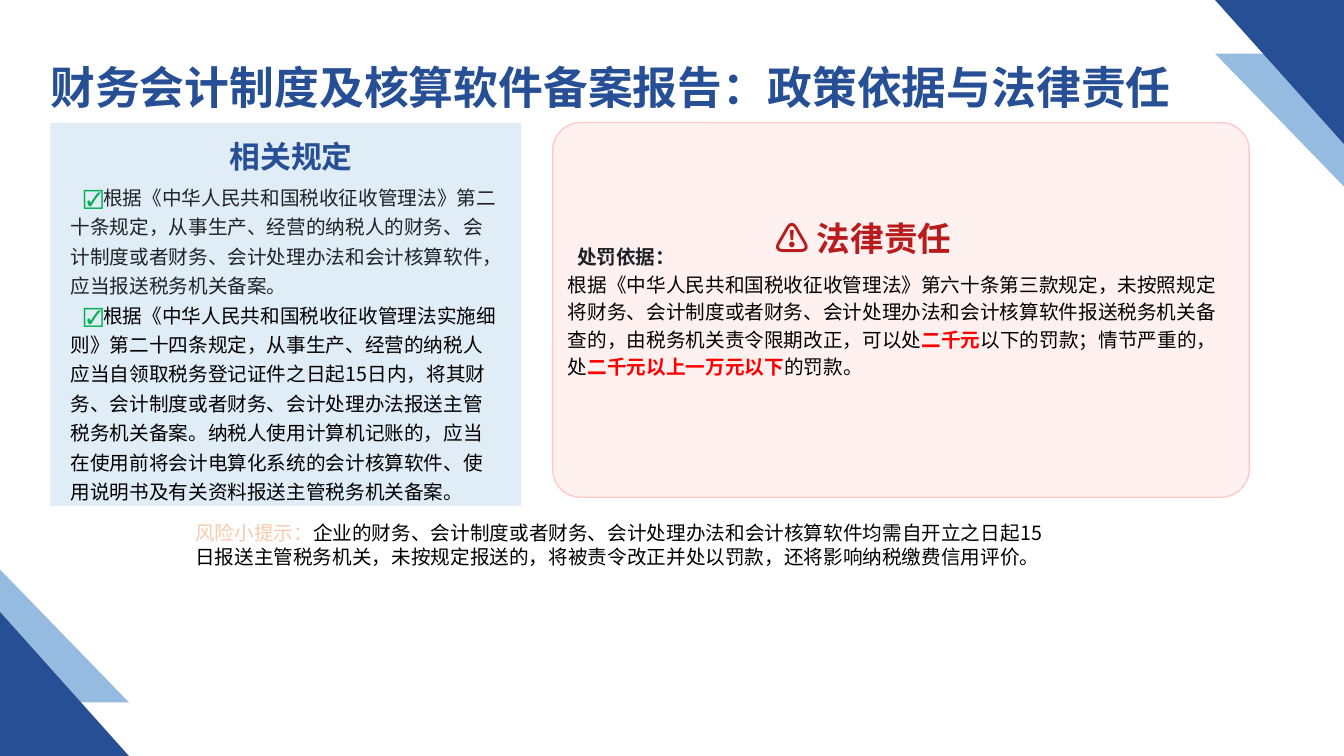
from dataclasses import dataclass

from lxml import etree
from pptx import Presentation
from pptx.dml.color import RGBColor
from pptx.enum.shapes import MSO_SHAPE
from pptx.enum.text import MSO_ANCHOR, MSO_AUTO_SIZE, PP_ALIGN
from pptx.oxml.ns import qn
from pptx.util import Cm, Pt

TRIANGLE, ROUNDED = MSO_SHAPE.RIGHT_TRIANGLE, MSO_SHAPE.ROUNDED_RECTANGLE
TOP, MIDDLE = MSO_ANCHOR.TOP, MSO_ANCHOR.MIDDLE
LEFT, CENTER = PP_ALIGN.LEFT, PP_ALIGN.CENTER
NO_FIT, GROW = MSO_AUTO_SIZE.NONE, MSO_AUTO_SIZE.SHAPE_TO_FIT_TEXT


@dataclass(frozen=True)
class Theme:
    font: str = "Noto Sans CJK SC"
    latin: str = "Arial"
    navy: str = "274F95"
    sky: str = "96BBE0"
    ice: str = "E0ECF6"
    blush: str = "FFF1F0"
    pink: str = "FECACA"
    crimson: str = "B91C1C"
    red: str = "FF0000"
    green: str = "00B050"
    ink: str = "1F2329"
    black: str = "000000"
    peach: str = "F8CBAD"
    orange: str = "ED7D31"
    title: int = 32
    warning: int = 24
    heading: int = 22
    body: int = 14


T = Theme()
SLIDE_W, SLIDE_H = 33.87, 19.05
CORNER_W = 3.25
CORNERS = [(14.35, 3.35, T.sky), (15.42, 3.63, T.navy)]

TITLE = [("财务会计制度及核算软件备案报告：政策依据与法律责任", T.navy, True)]
RULES_HEADING = [("相关规定", T.navy, True)]
RULES = [
    (0.33, [
        ("☑", T.green, False),
        ("根据《中华人民共和国税收征收管理法》第二十条规定，从事生产、经营的纳税人的财务、会计制度或者财务、"
         "会计处理办法和会计核算软件，应当报送税务机关备案。", T.ink, False),
    ]),
    (0.33, [
        ("☑", T.green, False),
        ("根据《中华人民共和国税收征收管理法实施细则》第二十四条规定，从事生产、经营的纳税人应当自领取税务登记证件之日起15日内，"
         "将其财务、会计制度或者财务、会计处理办法报送主管税务机关备案。纳税人使用计算机记账的，"
         "应当在使用前将会计电算化系统的会计核算软件、使用说明书及有关资料报送主管税务机关备案。", T.black, False),
    ]),
]
PENALTY = [
    (0.23, [("处罚依据：", T.ink, True)]),
    (0, [
        ("根据《中华人民共和国税收征收管理法》第六十条第三款规定，未按照规定将财务、会计制度或者财务、"
         "会计处理办法和会计核算软件报送税务机关备查的，由税务机关责令限期改正，可以处", T.black, False),
        ("二千元", T.red, True),
        ("以下的罚款；情节严重的，处", T.black, False),
        ("二千元以上一万元以下", T.red, True),
        ("的罚款。", T.black, False),
    ]),
]
WARNING = [("⚠ 法律责任", T.crimson, True)]
TIP = [
    ("风险小提示", T.peach, False, T.font, T.orange),
    ("：", T.peach, False, T.latin, T.orange),
    ("企业的财务、会计制度或者财务、会计处理办法和会计核算软件均需自开立之日起15日报送主管税务机关，"
     "未按规定报送的，将被责令改正并处以罚款，还将影响纳税缴费信用评价。", T.black, False),
]


def rgb(value):
    return RGBColor.from_string(value)


def add_run(p, size, text, color, bold, font=T.font, outline=None):
    r = p.add_run()
    r.text = text
    r.font.size, r.font.bold, r.font.name = Pt(size), bold, font
    r.font.color.rgb = rgb(color)
    props = r.font._element
    etree.SubElement(props, qn("a:ea")).set("typeface", T.font)
    if outline:
        ln = etree.Element(qn("a:ln"), w=str(Pt(1.75)))
        fill = etree.SubElement(ln, qn("a:solidFill"))
        etree.SubElement(fill, qn("a:srgbClr")).set("val", outline)
        props.insert(0, ln)


def write(s, paragraphs, size, spacing=1.0, align=LEFT, anchor=MIDDLE, inset=(0, 0), fit=NO_FIT):
    tf = s.text_frame
    tf.word_wrap, tf.auto_size, tf.vertical_anchor = True, fit, anchor
    tf.margin_left = tf.margin_right = Cm(inset[0])
    tf.margin_top = tf.margin_bottom = Cm(inset[1])
    for i, (indent, runs) in enumerate(paragraphs):
        p = tf.add_paragraph() if i else tf.paragraphs[0]
        p.alignment, p.line_spacing = align, spacing
        if indent:
            p._p.get_or_add_pPr().set("indent", str(Cm(indent)))
        for run in runs:
            add_run(p, size, *run)


def add_shape(slide, kind, box, fill, line=None, radius=None, rotation=0):
    s = slide.shapes.add_shape(kind, *map(Cm, box))
    s.shadow.inherit = False
    s.rotation = rotation
    s.fill.solid()
    s.fill.fore_color.rgb = rgb(fill)
    if line:
        s.line.color.rgb = rgb(line)
        s.line.width = Pt(1)
    else:
        s.line.fill.background()
    if radius is not None:
        s.adjustments[0] = radius
    return s


def add_text(slide, box, paragraphs, size, **options):
    write(slide.shapes.add_textbox(*map(Cm, box)), paragraphs, size, **options)


def main():
    prs = Presentation()
    prs.slide_width, prs.slide_height = Cm(SLIDE_W), Cm(SLIDE_H)
    slide = prs.slides.add_slide(prs.slide_layouts[5])

    title = slide.shapes.title
    title.left, title.top, title.width, title.height = map(Cm, (1.27, 0.38, 28.68, 3.25))
    write(title, [(0, TITLE)], T.title, spacing=1.25)

    for top, height, color in CORNERS:
        opposite = (SLIDE_W - CORNER_W, SLIDE_H - top - height)
        for (x, y), rotation in ((opposite, 180), ((0, top), 0)):
            add_shape(slide, TRIANGLE, (x, y, CORNER_W, height), color, rotation=rotation)

    add_shape(slide, ROUNDED, (1.27, 3.1, 11.86, 9.65), T.ice, radius=0)
    add_text(slide, (1.27, 2.97, 12.14, 1.7), [(0, RULES_HEADING)], T.heading, spacing=1.25, align=CENTER)
    add_text(slide, (1.78, 4.19, 10.87, 8.84), RULES, T.body, spacing=1.25)

    penalty = add_shape(slide, ROUNDED, (13.93, 3.09, 17.55, 9.44), T.blush, T.pink, 0.074)
    write(penalty, PENALTY, T.body, spacing=1.17, inset=(0.18, 0.18))
    add_text(slide, (19.3, 5.36, 8.61, 1.28), [(0, WARNING)], T.warning,
             anchor=TOP, inset=(0.25, 0.13), fit=GROW)
    add_text(slide, (4.67, 13, 21.89, 2.06), [(0, TIP)], T.body,
             anchor=TOP, inset=(0.25, 0.13), fit=GROW)

    prs.save("out.pptx")


if __name__ == "__main__":
    main()
